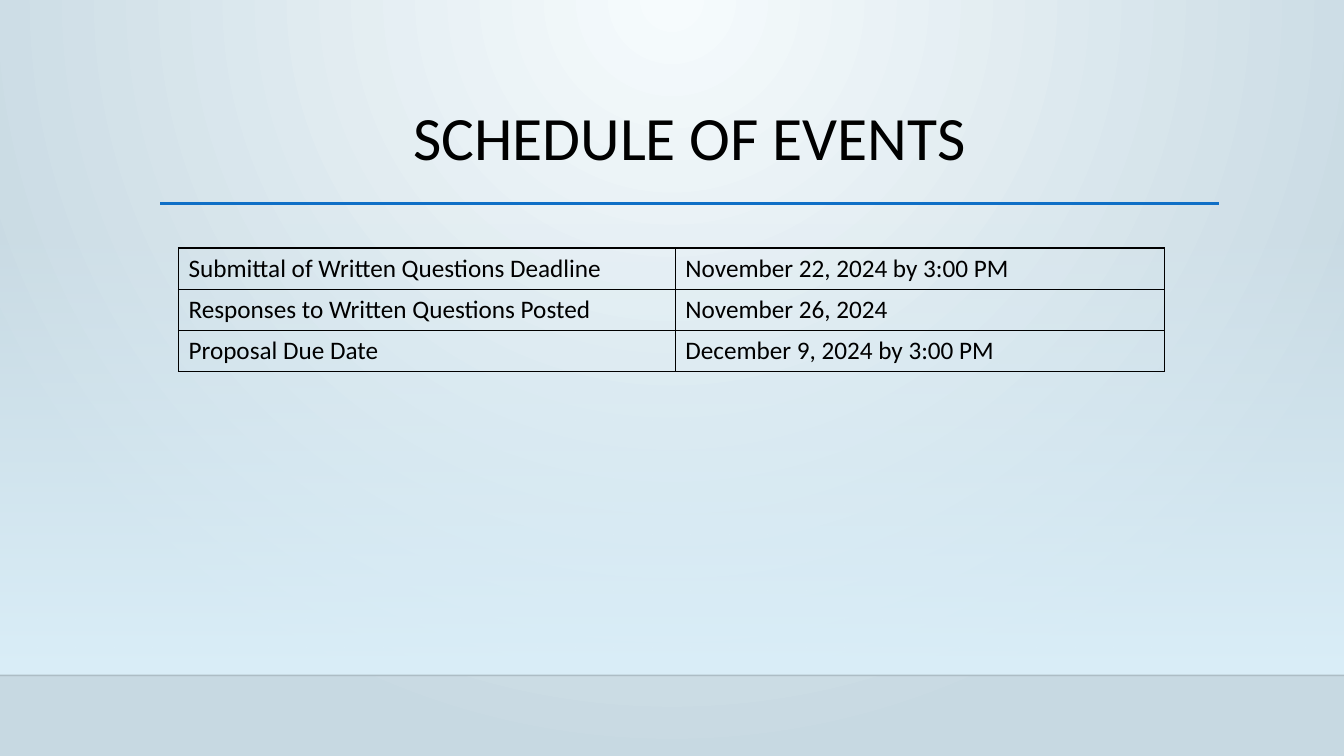
import pptx
import pptx.util
import pptx.dml.color
import pptx.enum.shapes
import pptx.enum.text
import pptx.oxml
import pptx.oxml.ns

Cm = pptx.util.Cm
Pt = pptx.util.Pt
RGBColor = pptx.dml.color.RGBColor
qn = pptx.oxml.ns.qn

TITLE = "SCHEDULE OF EVENTS"
EVENTS = [
    ("Submittal of Written Questions Deadline", "November 22, 2024 by 3:00 PM"),
    ("Responses to Written Questions Posted", "November 26, 2024"),
    ("Proposal Due Date", "December 9, 2024 by 3:00 PM"),
]

BLACK = RGBColor(0x00, 0x00, 0x00)
BLUE = RGBColor(0x0F, 0x6F, 0xC6)
PALE = RGBColor(0xF6, 0xFB, 0xFD)
GREY = RGBColor(0xC7, 0xD9, 0xE2)
SKY = RGBColor(0xDB, 0xEF, 0xF9)

WIDE, HIGH = 33.87, 19.05
FLOOR = 17.02
BAND = 11.4
LEFT, RIGHT = 4.04, 30.73
RULE = 5.13
COLS = (12.52, 12.32)
ROW = 1.04

LINES = [
    (0, WIDE, FLOOR, BLACK, 1, 20),
    (LEFT, RIGHT, RULE, BLUE, 2.5, 100),
]
GLOW = ('<a:path path="circle"><a:fillToRect l="43000" t="0" '
        'r="43000" b="100000"/></a:path>')
DOWN = '<a:lin ang="5400000" scaled="0"/>'
FORMAT = {"size": Pt(18), "name": "Calibri"}


def node(text):
    return pptx.oxml.parse_xml(text.replace(
        " ", ' xmlns:a="http://schemas.openxmlformats.org/drawingml/2006/main" ', 1))


def shade(fill, root, stops, way):
    fill.gradient()
    old = root.find(".//" + qn("a:gradFill"))
    marks = "".join(
        f'<a:gs pos="{pos}000"><a:srgbClr val="{color}">'
        f'<a:alpha val="{alpha}000"/></a:srgbClr></a:gs>'
        for pos, color, alpha in stops)
    new = node(f'<a:gradFill rotWithShape="1"><a:gsLst>{marks}</a:gsLst>{way}</a:gradFill>')
    old.getparent().replace(old, new)


def style(run, **extra):
    for key, value in {**FORMAT, **extra}.items():
        setattr(run.font, key, value)
    run.font.color.rgb = BLACK


def border(cell):
    props = cell._tc.get_or_add_tcPr()
    for spot, side in enumerate("LRTB"):
        props.insert(spot, node(
            f'<a:ln{side} w="12700"><a:solidFill><a:srgbClr val="{BLACK}"/>'
            f'</a:solidFill></a:ln{side}>'))


def main():
    deck = pptx.Presentation()
    deck.slide_width, deck.slide_height = Cm(WIDE), Cm(HIGH)
    slide = deck.slides.add_slide(deck.slide_layouts[6])
    shapes = slide.shapes

    shade(slide.background.fill, slide.element,
          [(0, PALE, 100), (100, GREY, 100)], GLOW)

    band = shapes.add_shape(pptx.enum.shapes.MSO_SHAPE.RECTANGLE,
                            0, Cm(FLOOR - BAND), Cm(WIDE), Cm(BAND))
    band.shadow.inherit = False
    band.line.fill.background()
    shade(band.fill, band.element, [(0, SKY, 0), (100, SKY, 100)], DOWN)

    for start, end, top, color, width, alpha in LINES:
        line = shapes.add_connector(pptx.enum.shapes.MSO_CONNECTOR.STRAIGHT,
                                    Cm(start), Cm(top), Cm(end), Cm(top))
        line.line.color.rgb = color
        line.line.width = Pt(width)
        line.element.find(".//" + qn("a:srgbClr")).append(
            node(f'<a:alpha val="{alpha}000"/>'))
        line.element.spPr.append(node("<a:effectLst />"))

    box = shapes.add_textbox(Cm(LEFT), Cm(2.59), Cm(RIGHT - LEFT), Cm(2.92))
    box.text_frame.word_wrap = True
    para = box.text_frame.paragraphs[0]
    para.alignment = pptx.enum.text.PP_ALIGN.CENTER
    para.line_spacing = 0.9
    run = para.add_run()
    run.text = TITLE
    style(run, size=Pt(44))

    table = shapes.add_table(len(EVENTS), len(COLS), Cm(4.5), Cm(6.25),
                             Cm(sum(COLS)), Cm(ROW * len(EVENTS))).table
    table.first_row = table.horz_banding = False
    for col, width in zip(table.columns, COLS):
        col.width = Cm(width)
    for row, event in zip(table.rows, EVENTS):
        row.height = Cm(ROW)
        for cell, text in zip(row.cells, event):
            cell.fill.background()
            border(cell)
            run = cell.text_frame.paragraphs[0].add_run()
            run.text = text
            style(run)

    deck.save("out.pptx")


if __name__ == "__main__":
    main()
